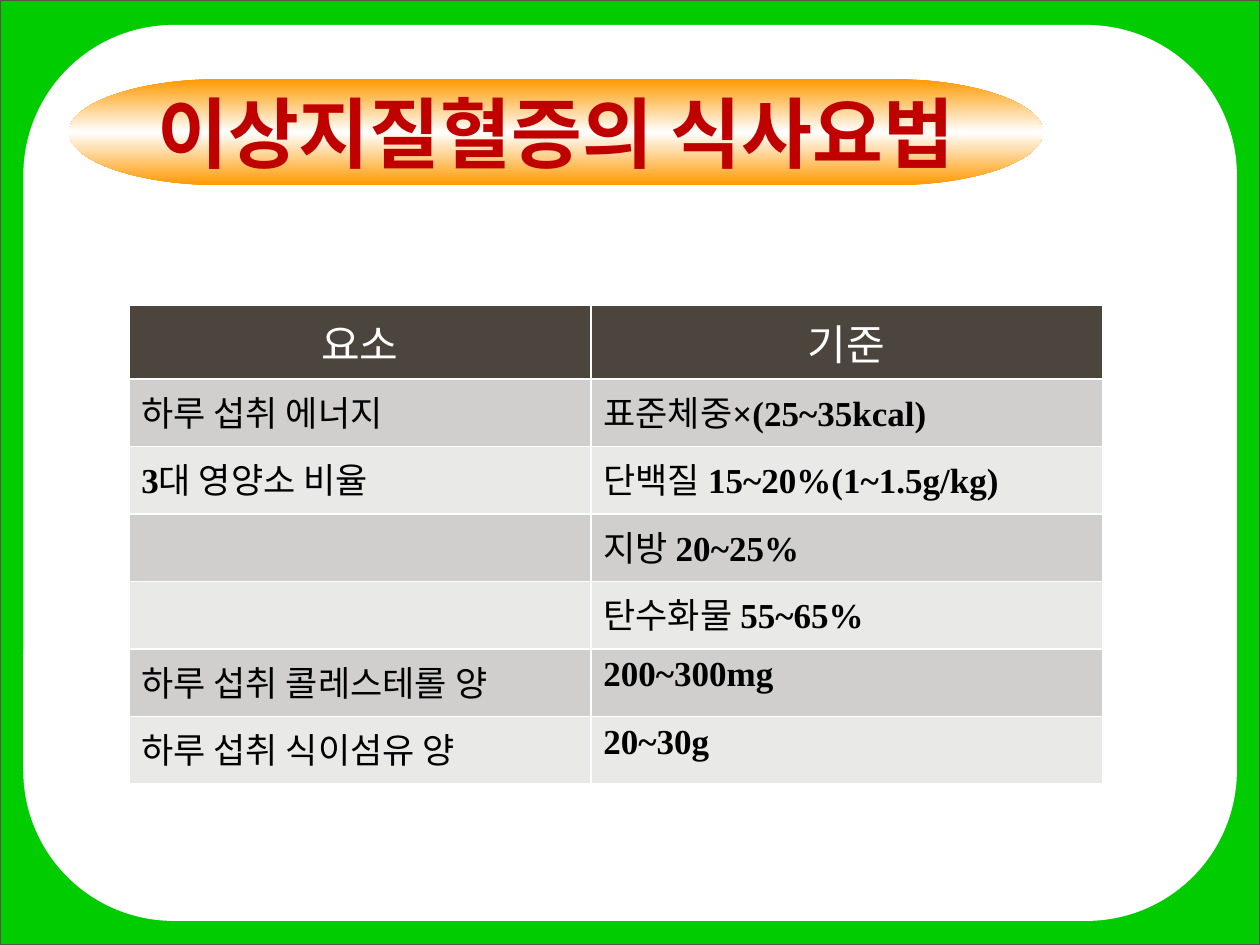
import copy

import pptx
import pptx.dml.color
import pptx.enum.shapes
import pptx.enum.text
import pptx.oxml
import pptx.oxml.ns
import pptx.util

Pt = pptx.util.Pt
SHAPE = pptx.enum.shapes.MSO_SHAPE
ALIGN = pptx.enum.text.PP_ALIGN
ANCHOR = pptx.enum.text.MSO_ANCHOR


def color(value):
    return pptx.dml.color.RGBColor.from_string(value)


class SlideBuilder:
    korean_font = "Noto Sans CJK KR"
    number_font = "Times New Roman"
    white = "FFFFFF"
    body_fills = ("D0CFCE", "E9E9E8")

    def __init__(self, slide):
        self.slide = slide

    def shape(self, kind, box, fill=None, line=None, line_width=1):
        shape = self.slide.shapes.add_shape(kind, *map(Pt, box))
        shape.shadow.inherit = False
        if fill:
            shape.fill.solid()
            shape.fill.fore_color.rgb = color(fill)
        if line:
            shape.line.color.rgb = color(line)
            shape.line.width = Pt(line_width)
        else:
            shape.line.fill.background()
        return shape

    def gradient(self, shape, colors):
        """Spread three colours evenly from top to bottom."""
        shape.fill.gradient()
        shape.fill.gradient_angle = 90
        stops = shape._element.spPr.find(".//" + pptx.oxml.ns.qn("a:gsLst"))
        stops.insert(1, copy.deepcopy(stops[0]))
        for i, stop in enumerate(shape.fill.gradient_stops):
            stop.position = i / 2
            stop.color.rgb = color(colors[i])

    def style_run(self, run, size, text_color, bold=False, font=korean_font):
        run.font.size = Pt(size)
        run.font.bold = bold
        run.font.name = font
        run.font.color.rgb = color(text_color)
        east_asian = pptx.oxml.parse_xml(
            f'<a:ea {pptx.oxml.ns.nsdecls("a")} typeface="{self.korean_font}"/>')
        run.font._element.find(pptx.oxml.ns.qn("a:latin")).addnext(east_asian)

    def title(self, box, text, colors):
        banner = self.shape(SHAPE.FLOWCHART_TERMINATOR, box)
        self.gradient(banner, colors)
        frame = banner.text_frame
        frame.word_wrap = False
        frame.vertical_anchor = ANCHOR.MIDDLE
        frame.text = text
        frame.paragraphs[0].alignment = ALIGN.CENTER
        self.style_run(frame.paragraphs[0].runs[0], 44, "C00000", bold=True)

    def borders(self, cell):
        properties = cell._tc.get_or_add_tcPr()
        for i, side in enumerate(("lnL", "lnR", "lnT", "lnB")):
            properties.insert(i, pptx.oxml.parse_xml(
                f'<a:{side} {pptx.oxml.ns.nsdecls("a")} w="12700"><a:solidFill>'
                f'<a:srgbClr val="{self.white}"/></a:solidFill></a:{side}>'))

    def cell(self, cell, texts, row):
        header = row == 0
        cell.fill.solid()
        cell.fill.fore_color.rgb = color(
            "4C453D" if header else self.body_fills[(row - 1) % 2])
        self.borders(cell)
        paragraph = cell.text_frame.paragraphs[0]
        paragraph.alignment = ALIGN.CENTER if header else ALIGN.LEFT
        for text in texts:
            run = paragraph.add_run()
            run.text = text
            numeric = text[0] < "가"
            self.style_run(run, 24 if header else 20,
                           self.white if header else "000000", numeric,
                           self.number_font if numeric else self.korean_font)

    def table(self, left, top, widths, heights, rows):
        table = self.slide.shapes.add_table(
            len(rows), len(widths), Pt(left), Pt(top),
            Pt(sum(widths)), Pt(sum(heights))).table
        for column, width in zip(table.columns, widths):
            column.width = Pt(width)
        for r, texts_by_column in enumerate(rows):
            table.rows[r].height = Pt(heights[r])
            for c, texts in enumerate(texts_by_column):
                self.cell(table.cell(r, c), texts, r)


# Each cell is a list of runs: Korean words and numbers apart
DIET_ROWS = [
    (["요소"], ["기준"]),
    (["하루 섭취 에너지"], ["표준체중", "×(25~35kcal)"]),
    (["3", "대 영양소 비율"], ["단백질 ", "15~20%(1~1.5g/kg)"]),
    ([], ["지방 ", "20~25%"]),
    ([], ["탄수화물 ", "55~65%"]),
    (["하루 섭취 콜레스테롤 양"], ["200~300mg"]),
    (["하루 섭취 식이섬유 양"], ["20~30g"]),
]


def main():
    deck = pptx.Presentation()
    deck.slide_width, deck.slide_height = Pt(720), Pt(540)
    builder = SlideBuilder(deck.slides.add_slide(deck.slide_layouts[6]))

    # Green frame around a white rounded panel
    builder.shape(SHAPE.RECTANGLE, (0, 0, 720, 540), "00CC00", "5B5249", 0.75)
    panel = builder.shape(SHAPE.ROUNDED_RECTANGLE, (14.1, 15, 692, 510.5),
                          builder.white, builder.white, 1.5)
    panel.adjustments[0] = 0.167

    # Title banner
    builder.title((39.5, 45, 556.5, 61), "이상지질혈증의 식사요법",
                  ("FF9900", builder.white, "FF9900"))

    # Diet guideline table
    heights = [41] + [38.6] * (len(DIET_ROWS) - 1)
    builder.table(73.6, 174.6, (264, 292.4), heights, DIET_ROWS)

    deck.save("out.pptx")


if __name__ == "__main__":
    main()
